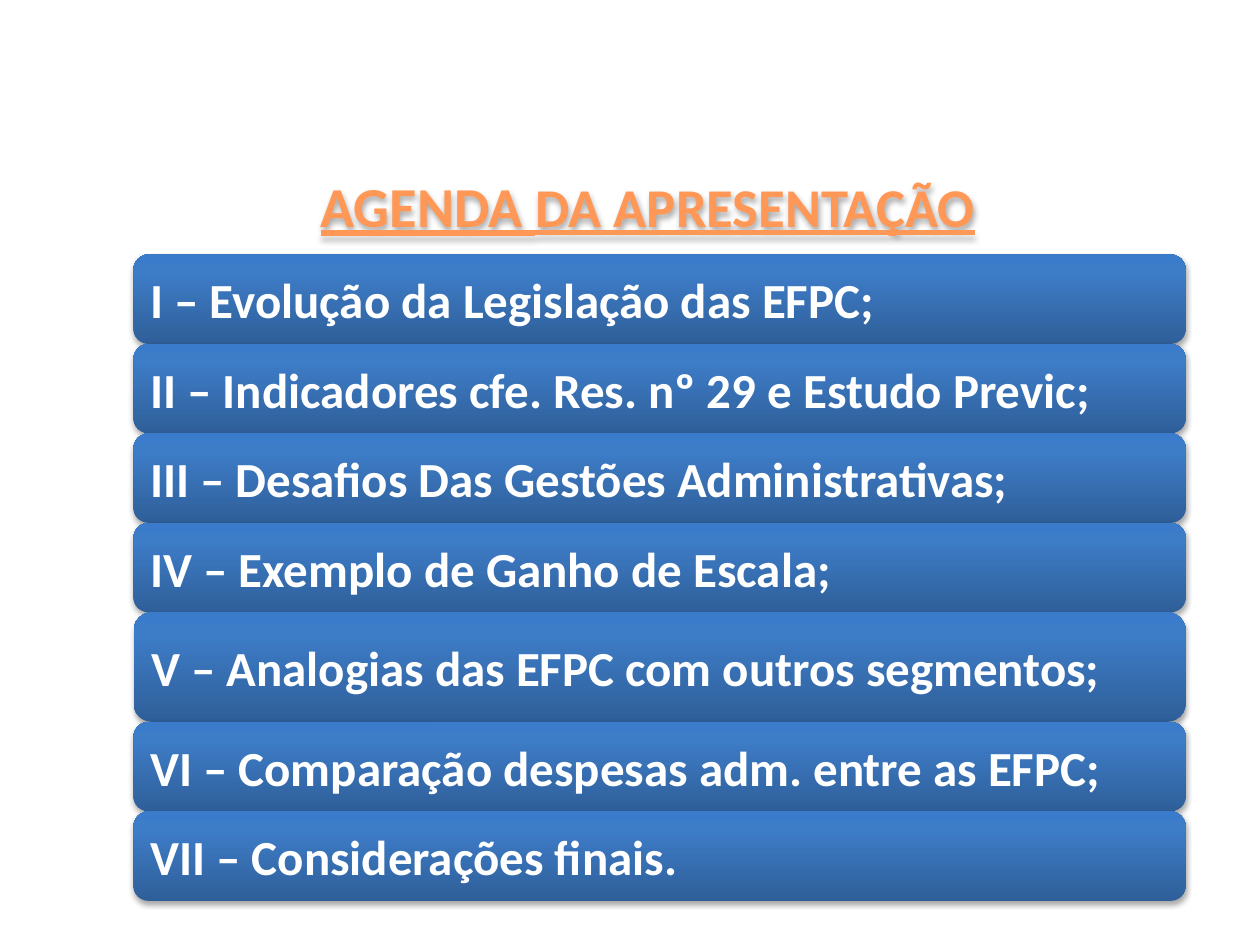
from copy import deepcopy

from lxml.etree import SubElement
from pptx import Presentation
from pptx.dml.color import RGBColor
from pptx.enum.shapes import MSO_SHAPE as Shape
from pptx.enum.text import MSO_ANCHOR as Anchor, PP_ALIGN as Align
from pptx.oxml.ns import qn
from pptx.util import Inches, Pt

TITLE_RUNS = [("AGENDA ", 32.2), ("DA APRESENTAÇÃO", 31.2)]
BAR_HEIGHT = 0.71
TALL_BAR_HEIGHT = 0.87
AGENDA = [
    ("I – Evolução da Legislação das EFPC;", BAR_HEIGHT),
    ("II – Indicadores cfe. Res. nº 29 e Estudo Previc;", BAR_HEIGHT),
    ("III – Desafios Das Gestões Administrativas;", BAR_HEIGHT),
    ("IV – Exemplo de Ganho de Escala;", BAR_HEIGHT),
    ("V – Analogias das EFPC com outros segmentos;", TALL_BAR_HEIGHT),
    ("VI – Comparação despesas adm. entre as EFPC;", BAR_HEIGHT),
    ("VII – Considerações finais.", BAR_HEIGHT),
]
BAR_LEFT, BAR_TOP, BAR_WIDTH = 1.06, 2.02, 8.35

ORANGE = RGBColor(0xFF, 0x98, 0x56)
WHITE = RGBColor(0xFF, 0xFF, 0xFF)
BLACK = RGBColor(0x00, 0x00, 0x00)
BAR_STOPS = [
    (0, RGBColor(0x2F, 0x5F, 0x99)),
    (0.8, RGBColor(0x3D, 0x7C, 0xC7)),
    (1, RGBColor(0x3A, 0x7C, 0xCB)),
]


def add_shadow(shape):
    shape.shadow.inherit = False
    effects = shape._element.spPr.find(qn("a:effectLst"))
    shadow = SubElement(effects, qn("a:outerShdw"), blurRad=str(Pt(3.1)),
                        dist=str(Pt(1.8)), dir="5400000", rotWithShape="0")
    color = SubElement(shadow, qn("a:srgbClr"), val=str(BLACK))
    SubElement(color, qn("a:alpha"), val="35000")


def fill_gradient(shape):
    shape.fill.gradient()
    shape.fill.gradient_angle = 90
    stop_list = shape._element.spPr.find(".//" + qn("a:gsLst"))
    stop_list.append(deepcopy(stop_list[0]))
    for stop, (position, color) in zip(shape.fill.gradient_stops, BAR_STOPS):
        stop.position = position
        stop.color.rgb = color


def add_run(paragraph, text, size, color, underline=False):
    run = paragraph.add_run()
    run.text = text
    font = run.font
    font.name, font.size, font.bold = "Calibri", Pt(size), True
    font.color.rgb = color
    if underline:
        font.underline = True


def prepare_text(shape, alignment):
    frame = shape.text_frame
    frame.word_wrap = True
    frame.vertical_anchor = Anchor.MIDDLE
    paragraph = frame.paragraphs[0]
    paragraph.alignment = alignment
    return paragraph


def add_title(slide):
    title = slide.shapes.add_textbox(Inches(0.28), Inches(1.31), Inches(9.72), Inches(0.63))
    add_shadow(title)
    paragraph = prepare_text(title, Align.CENTER)
    for text, size in TITLE_RUNS:
        add_run(paragraph, text, size, ORANGE, underline=True)


def add_agenda(slide):
    top = BAR_TOP
    for text, height in AGENDA:
        bar = slide.shapes.add_shape(Shape.ROUNDED_RECTANGLE, Inches(BAR_LEFT), Inches(top),
                                     Inches(BAR_WIDTH), Inches(height))
        fill_gradient(bar)
        bar.line.fill.background()
        add_shadow(bar)
        add_run(prepare_text(bar, Align.LEFT), text, 28, WHITE)
        top += height


def main():
    presentation = Presentation()
    presentation.slide_width, presentation.slide_height = Inches(10), Inches(7.5)
    slide = presentation.slides.add_slide(presentation.slide_layouts[6])
    add_title(slide)
    add_agenda(slide)
    presentation.save("out.pptx")


if __name__ == "__main__":
    main()
